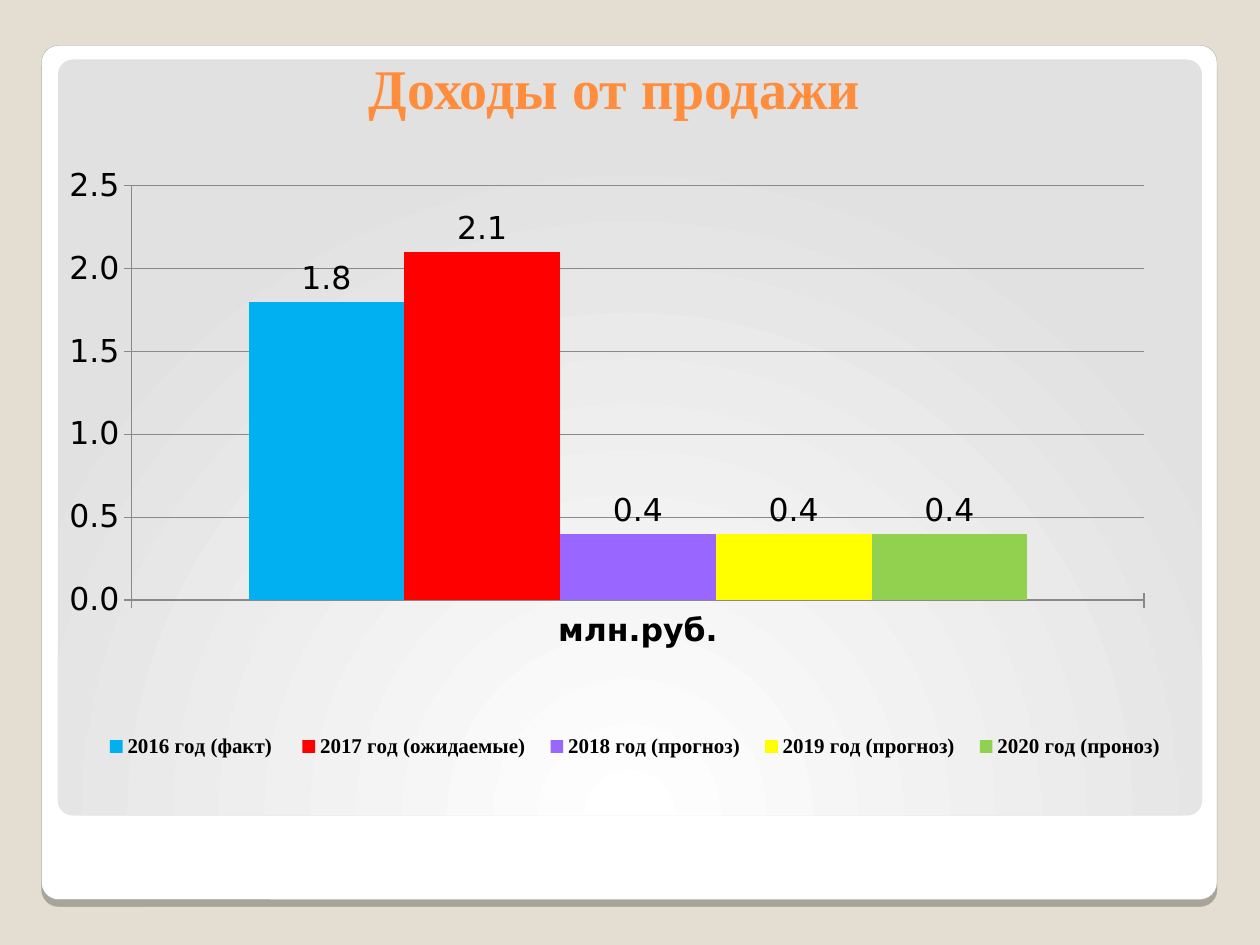
from lxml.etree import SubElement
from pptx import Presentation
from pptx.chart.data import CategoryChartData
from pptx.dml.color import RGBColor
from pptx.enum.chart import XL_CHART_TYPE, XL_LABEL_POSITION, XL_LEGEND_POSITION, XL_TICK_MARK
from pptx.enum.shapes import MSO_SHAPE
from pptx.enum.text import MSO_ANCHOR, PP_ALIGN
from pptx.oxml import parse_xml
from pptx.oxml.ns import nsdecls, qn
from pptx.util import Inches, Pt

WIDTH, HEIGHT = Inches(10), Inches(7.5)
SERIF, SANS = "Times New Roman", "DejaVu Sans"
BLACK, AXIS_GREY = "000000", "898989"

# Series name, value in million roubles, colour
INCOME = [
    ("2016 год (факт) ", 1.8, "00B0F0"),
    ("2017 год (ожидаемые)", 2.1, "FF0000"),
    ("2018 год (прогноз)", 0.4, "9966FF"),
    ("2019 год (прогноз)", 0.4, "FFFF00"),
    ("2020 год (проноз)", 0.4, "92D050"),
]

CARD_SHADOW = f"""<a:effectLst {nsdecls('a')}>
  <a:outerShdw blurRad="0" dist="50800" dir="5400000" algn="t" rotWithShape="0">
    <a:srgbClr val="000000"><a:alpha val="25000"/></a:srgbClr>
  </a:outerShdw></a:effectLst>"""

PANEL_GRADIENT = f"""<a:gradFill {nsdecls('a')} rotWithShape="1">
  <a:gsLst>
    <a:gs pos="0"><a:srgbClr val="FFFFFF"/></a:gs>
    <a:gs pos="100000"><a:srgbClr val="E1E1E1"/></a:gs>
  </a:gsLst>
  <a:path path="circle">
    <a:fillToRect l="50000" t="175000" r="50000" b="-75000"/>
  </a:path></a:gradFill>"""


def color(hex_string):
    return RGBColor.from_string(hex_string)


def place(left, top, width, height):
    """Turn percentages of the slide's size into lengths."""
    return (int(WIDTH * left / 100), int(HEIGHT * top / 100),
            int(WIDTH * width / 100), int(HEIGHT * height / 100))


def style_font(font, size, name, hex_string=BLACK, bold=False):
    font.size = Pt(size)
    font.name = name
    font.bold = bold
    font.color.rgb = color(hex_string)


def style_line(line, hex_string, width):
    line.color.rgb = color(hex_string)
    line.width = Pt(width)


def add_rounded(page, area, fill):
    shape = page.shapes.add_shape(MSO_SHAPE.ROUNDED_RECTANGLE, *place(*area))
    shape.adjustments[0] = 0.02
    shape.shadow.inherit = False
    shape.fill.solid()
    shape.fill.fore_color.rgb = color(fill)
    shape.line.fill.background()
    return shape


def add_frame(page):
    # White card with a hard shadow below it
    card = add_rounded(page, (3.3, 4.8, 93.3, 90.4), "FFFFFF")
    style_line(card.line, "A4A3A3", 0.16)
    properties = card.element.spPr
    properties.replace(properties.find(qn("a:effectLst")), parse_xml(CARD_SHADOW))

    # Grey panel with a radial gradient
    panel = add_rounded(page, (4.6, 6.3, 90.8, 80), "E1E1E1")
    properties = panel.element.spPr
    properties.replace(properties.find(qn("a:solidFill")), parse_xml(PANEL_GRADIENT))


def add_title(page, text):
    box = page.shapes.add_textbox(*place(3.1, 4.13, 91.4, 9.33))
    frame = box.text_frame
    frame.word_wrap = True
    frame.vertical_anchor = MSO_ANCHOR.BOTTOM
    para = frame.paragraphs[0]
    para.alignment = PP_ALIGN.CENTER
    span = para.add_run()
    span.text = text
    style_font(span.font, 32, SERIF, "FF8D3E", bold=True)


def set_layout(element, x, y, width, height, target=None):
    """Fix a chart part at shares of the chart's size."""
    layout = element.find(qn("c:layout"))
    if layout is None:
        layout = parse_xml(f"<c:layout {nsdecls('c')}/>")
        if target:
            element.insert(0, layout)
        else:
            element.find(qn("c:legendPos")).addnext(layout)
    manual = SubElement(layout, qn("c:manualLayout"))
    settings = [("xMode", "edge"), ("yMode", "edge"),
                ("x", x), ("y", y), ("w", width), ("h", height)]
    if target:
        settings.insert(0, ("layoutTarget", target))
    for tag, value in settings:
        SubElement(manual, qn(f"c:{tag}")).set("val", str(value))


def style_axis(axis, bold=False):
    axis.major_tick_mark = XL_TICK_MARK.CROSS
    axis.minor_tick_mark = XL_TICK_MARK.NONE
    style_font(axis.tick_labels.font, 18, SANS, bold=bold)
    style_line(axis.format.line, AXIS_GREY, 0.75)


def style_series(series, fill):
    series.format.fill.solid()
    series.format.fill.fore_color.rgb = color(fill)
    labels = series.data_labels
    labels.show_value = True
    labels.position = XL_LABEL_POSITION.OUTSIDE_END
    style_font(labels.font, 18, SANS)


def add_income_chart(page):
    data = CategoryChartData()
    data.categories = ["млн.руб."]
    for name, value, _ in INCOME:
        data.add_series(name, [value])
    chart = page.shapes.add_chart(
        XL_CHART_TYPE.COLUMN_CLUSTERED, *place(5.5, 13.6, 89.8, 82.27), data).chart
    chart.has_title = False
    style_font(chart.font, 18, SANS)

    # Columns
    plot = chart.plots[0]
    plot.vary_by_categories = False
    plot.gap_width = 150
    plot.overlap = 0
    for series, (_, _, fill) in zip(plot.series, INCOME):
        style_series(series, fill)

    # Axes
    style_axis(chart.category_axis, bold=True)
    values = chart.value_axis
    style_axis(values)
    values.minimum_scale, values.maximum_scale, values.major_unit = 0, 2.5, 0.5
    values.tick_labels.number_format = "0.0"
    values.tick_labels.number_format_is_linked = False
    values.has_major_gridlines = True
    style_line(values.major_gridlines.format.line, AXIS_GREY, 0.75)

    # Legend in one row under the plot
    chart.has_legend = True
    legend = chart.legend
    legend.position = XL_LEGEND_POSITION.RIGHT
    legend.include_in_layout = False
    style_font(legend.font, 12, SERIF, bold=True)

    plot_area = chart.element.find(qn("c:chart")).find(qn("c:plotArea"))
    set_layout(plot_area, 0, 0.05, 0.95, 0.62, target="outer")
    set_layout(chart.element.find(qn("c:chart")).find(qn("c:legend")),
               0.02, 0.76, 0.96, 0.07)


def main():
    deck = Presentation()
    deck.slide_width, deck.slide_height = WIDTH, HEIGHT
    page = deck.slides.add_slide(deck.slide_layouts[6])
    page.background.fill.solid()
    page.background.fill.fore_color.rgb = color("E3DED1")
    add_frame(page)
    add_title(page, "Доходы от продажи")
    add_income_chart(page)
    deck.save("out.pptx")


if __name__ == "__main__":
    main()
